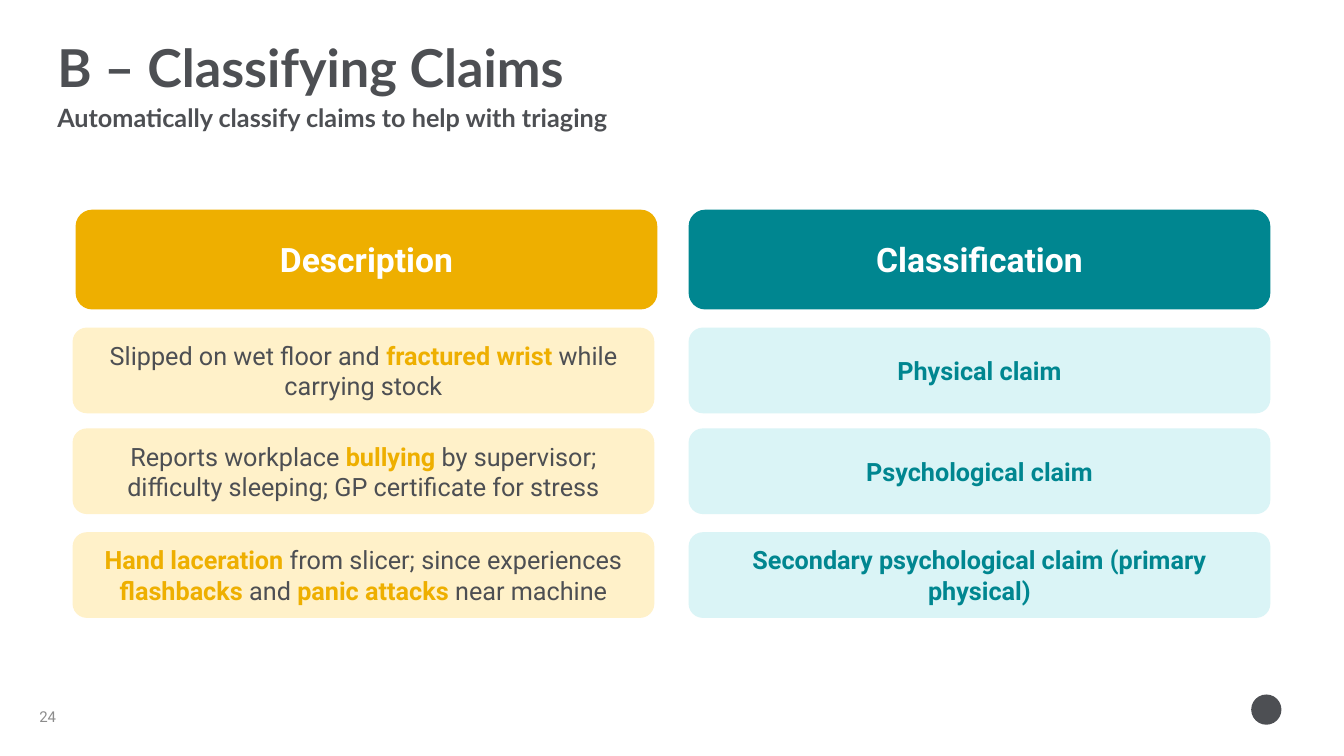
import pptx
import pptx.util
import pptx.dml.color
import pptx.enum.shapes
import pptx.enum.text

Inches = pptx.util.Inches
SHAPES = pptx.enum.shapes.MSO_SHAPE
ALIGN = pptx.enum.text.PP_ALIGN
ANCHOR = pptx.enum.text.MSO_ANCHOR

TITLE = "B – Classifying Claims"
SUBTITLE = "Automatically classify claims to help with triaging"
PAGE_NUMBER = "24"

COLORS = {
    "text": "4D4F53",
    "muted": "8C8C8C",
    "white": "FFFFFF",
    "gold": "EEAF00",
    "pale gold": "FFF1C9",
    "teal": "008690",
    "pale teal": "DAF4F6",
}

COLUMNS = [
    {
        "heading": "Description",
        "heading_left": 0.75,
        "left": 0.72,
        "accent": "gold",
        "cells": [
            [("Slipped on wet floor and ", False), ("fractured wrist", True),
             (" while carrying stock", False)],
            [("Reports workplace ", False), ("bullying ", True),
             ("by supervisor; difficulty sleeping; GP certificate for stress", False)],
            [("Hand laceration ", True), ("from slicer; since experiences ", False),
             ("flashbacks", True), (" and ", False), ("panic attacks ", True),
             ("near machine", False)],
        ],
    },
    {
        "heading": "Classification",
        "heading_left": 6.83,
        "left": 6.83,
        "accent": "teal",
        "cells": [
            [("Physical claim", True)],
            [("Psychological claim", True)],
            [("Secondary psychological claim (primary physical)", True)],
        ],
    },
]

HEADING_TOP, HEADING_HEIGHT = 2.08, 0.99
ROW_TOPS, ROW_HEIGHT = [3.25, 4.25, 5.28], 0.85
COLUMN_WIDTH = 5.77

presentation = pptx.Presentation()
presentation.slide_width = Inches(13.33)
presentation.slide_height = Inches(7.5)
slide = presentation.slides.add_slide(presentation.slide_layouts[6])


def rgb(name):
    return pptx.dml.color.RGBColor.from_string(COLORS[name])


def write_text(shape, runs, size, font="Roboto", color="text", accent=None,
               align=ALIGN.LEFT, anchor=ANCHOR.TOP):
    frame = shape.text_frame
    frame.word_wrap = True
    frame.vertical_anchor = anchor
    paragraph = frame.paragraphs[0]
    paragraph.alignment = align
    for text, emphasised in runs:
        run = paragraph.add_run()
        run.text = text
        run.font.name = font
        run.font.size = pptx.util.Pt(size)
        run.font.bold = emphasised
        run.font.color.rgb = rgb(accent if emphasised and accent else color)


def add_label(left, top, width, height, runs, size, **text_format):
    box = slide.shapes.add_textbox(
        Inches(left), Inches(top), Inches(width), Inches(height))
    write_text(box, runs, size, **text_format)
    return box


def add_block(kind, left, top, width, height, fill):
    shape = slide.shapes.add_shape(
        kind, Inches(left), Inches(top), Inches(width), Inches(height))
    shape.shadow.inherit = False
    shape.fill.solid()
    shape.fill.fore_color.rgb = rgb(fill)
    shape.line.fill.background()
    return shape


def add_card(left, top, height, fill, runs, size, **text_format):
    card = add_block(SHAPES.ROUNDED_RECTANGLE, left, top, COLUMN_WIDTH, height, fill)
    write_text(card, runs, size, align=ALIGN.CENTER, anchor=ANCHOR.MIDDLE, **text_format)


add_label(0.47, 0.3, 12.4, 0.73, [(TITLE, True)], 37.3, font="Lato")
add_label(0.47, 0.97, 9.27, 0.4, [(SUBTITLE, True)], 18, font="Lato")

for column in COLUMNS:
    accent = column["accent"]
    add_card(column["heading_left"], HEADING_TOP, HEADING_HEIGHT, accent,
             [(column["heading"], True)], 24, color="white")
    for top, runs in zip(ROW_TOPS, column["cells"]):
        add_card(column["left"], top, ROW_HEIGHT, "pale " + accent, runs, 18, accent=accent)

page_label = add_label(0.26, 6.91, 3.11, 0.4, [(PAGE_NUMBER, False)], 10.7,
                       color="muted", anchor=ANCHOR.MIDDLE)
page_label.text_frame.margin_left = Inches(0.13)
add_block(SHAPES.OVAL, 12.41, 6.89, 0.3, 0.3, "text")

presentation.save("out.pptx")
